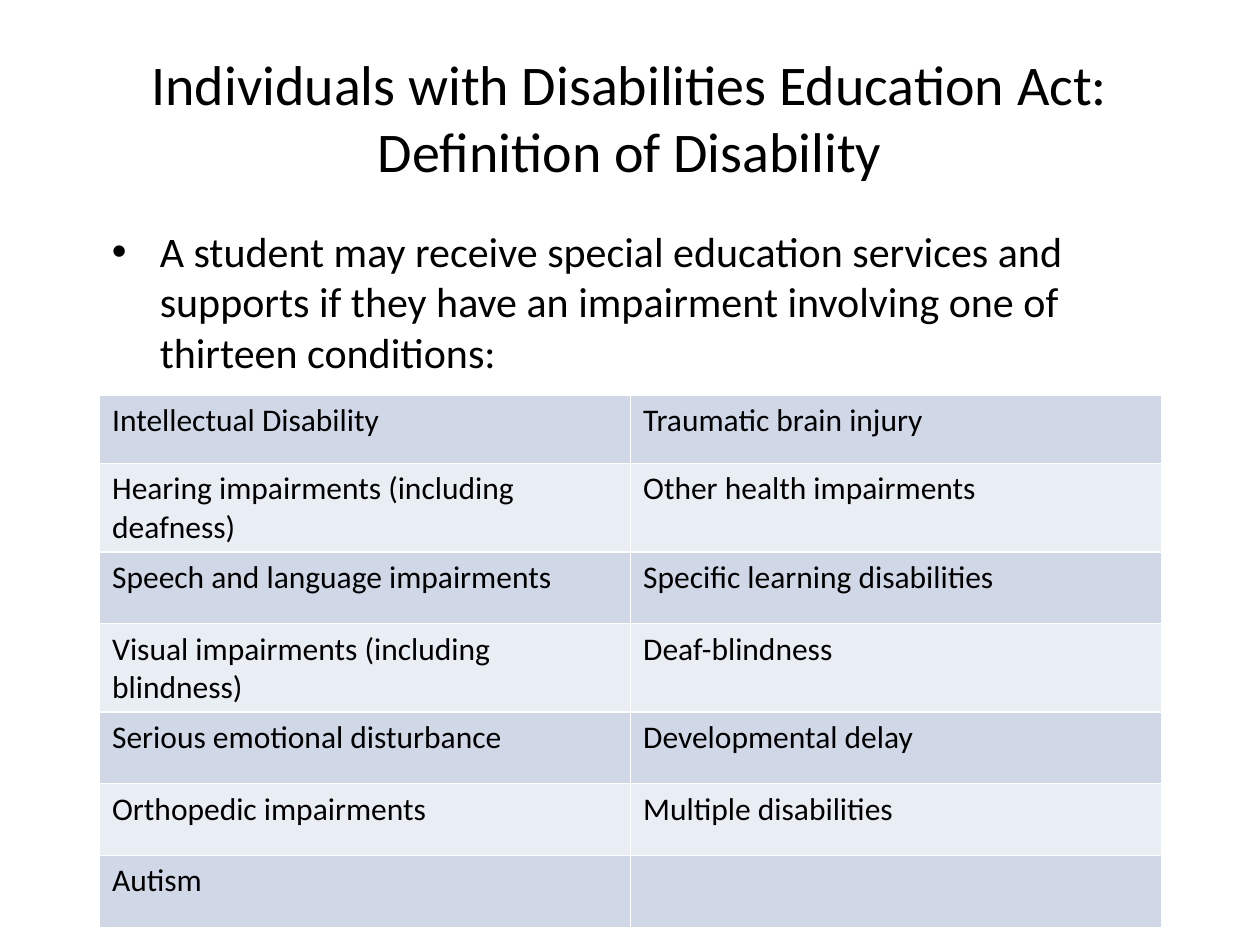
from lxml.etree import SubElement as Sub
from pptx import Presentation
from pptx.dml.color import RGBColor as Rgb
from pptx.enum.text import MSO_ANCHOR as Anchor, PP_ALIGN as Align
from pptx.oxml.ns import qn
from pptx.util import Emu, Inches, Pt

HUES = {"text": "000000", "line": "FFFFFF", "odd": "D0D8E8", "even": "E9EDF4"}
FONT = "Calibri"
TITLE = "Individuals with Disabilities Education Act: Definition of Disability"
LEAD = ("A student may receive special education services and supports "
        "if they have an impairment involving one of thirteen conditions:")
ROWS = [
    ("Intellectual Disability", "Traumatic brain injury"),
    ("Hearing impairments (including deafness)", "Other health impairments"),
    ("Speech and language impairments", "Specific learning disabilities"),
    ("Visual impairments (including blindness)", "Deaf-blindness"),
    ("Serious emotional disturbance", "Developmental delay"),
    ("Orthopedic impairments", "Multiple disabilities"),
    ("Autism", ""),
]


def hue(name):
    """Return the named colour."""
    return Rgb.from_string(HUES[name])


def add_run(para, text, size):
    """Add one styled run to a paragraph."""
    run = para.add_run()
    run.text = text
    run.font.name = FONT
    run.font.size = Pt(size)
    run.font.color.rgb = hue("text")


def add_text(slide, box, text, size):
    """Add a wrapped text box and return its frame."""
    frame = slide.shapes.add_textbox(*box).text_frame
    frame.word_wrap = True
    add_run(frame.paragraphs[0], text, size)
    return frame


def add_title(slide, box):
    """Place the centred title."""
    frame = add_text(slide, box, TITLE, 32)
    frame.vertical_anchor = Anchor.MIDDLE
    frame.paragraphs[0].alignment = Align.CENTER


def add_lead(slide, box):
    """Place the bulleted lead sentence."""
    para = add_text(slide, box, LEAD, 24).paragraphs[0]
    para.space_before = Pt(4.8)
    props = para._p.get_or_add_pPr()
    dent = Inches(0.38)
    props.set("marL", str(dent))
    props.set("indent", str(-dent))
    Sub(props, qn("a:buFont"), typeface="Arial")
    Sub(props, qn("a:buChar"), char="•")


def add_edges(cell):
    """Draw thin lines on all four sides of a cell."""
    props = cell._tc.get_or_add_tcPr()
    for side in ("lnL", "lnR", "lnT", "lnB"):
        line = Sub(props, qn(f"a:{side}"), w=str(Pt(1)))
        fill = Sub(line, qn("a:solidFill"))
        Sub(fill, qn("a:srgbClr"), val=HUES["line"])


def add_grid(slide, box):
    """Place the banded table of conditions."""
    left, top, width, height = box
    grid = slide.shapes.add_table(len(ROWS), 2, *box).table
    grid.first_row = grid.horz_banding = False
    for col in grid.columns:
        col.width = Emu(width // 2)
    step = Inches(0.57)
    for i, (row, texts) in enumerate(zip(grid.rows, ROWS)):
        row.height = step if i else height - step * (len(ROWS) - 1)
        for cell, text in zip(row.cells, texts):
            add_edges(cell)
            cell.fill.solid()
            cell.fill.fore_color.rgb = hue("even" if i % 2 else "odd")
            if text:
                add_run(cell.text_frame.paragraphs[0], text, 18)


def main():
    """Build and save the slide."""
    deck = Presentation()
    deck.slide_width, deck.slide_height = Inches(10), Inches(7.5)
    slide = deck.slides.add_slide(deck.slide_layouts[6])
    left, width = Inches(0.79), Inches(8.43)
    add_title(slide, (Inches(0.5), Inches(0.3), Inches(9), Inches(1.25)))
    add_lead(slide, (left, Inches(1.74), width, Inches(2.44)))
    add_grid(slide, (left, Inches(3.14), width, Inches(3.96)))
    deck.save("out.pptx")


if __name__ == "__main__":
    main()
